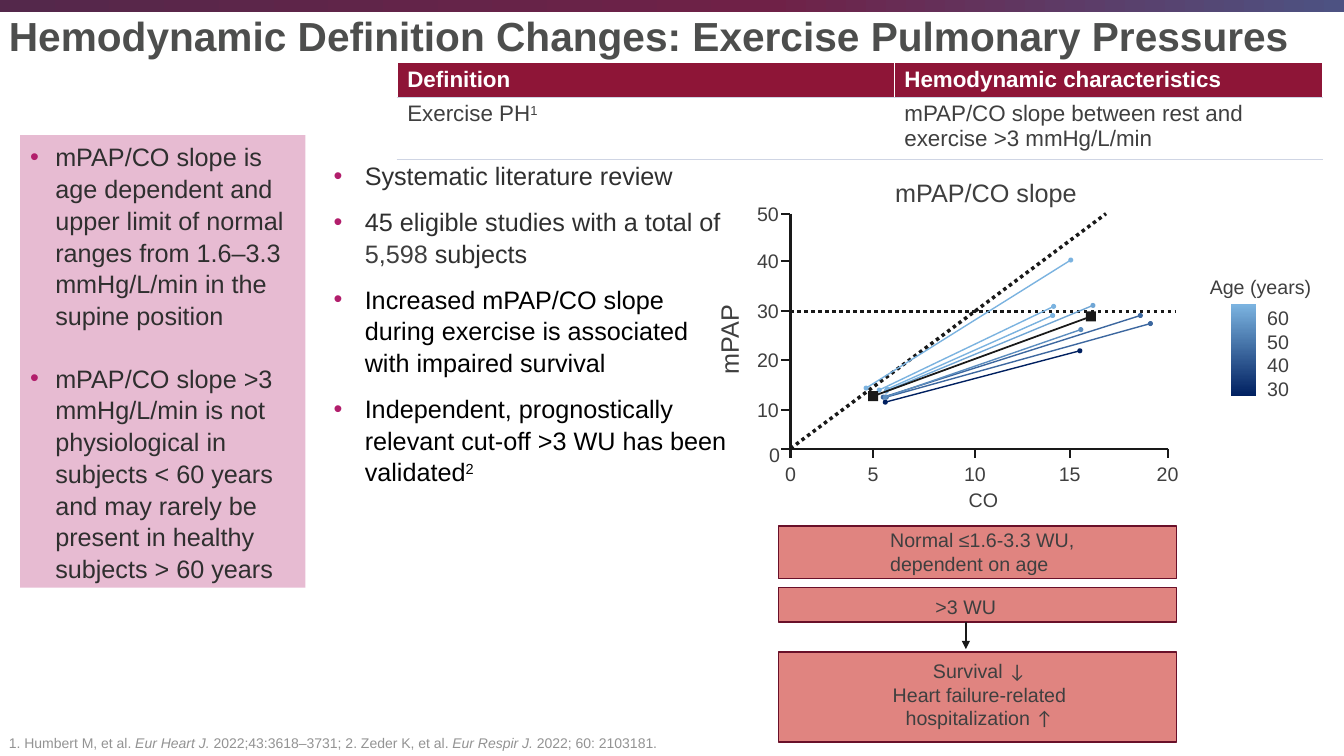
from lxml import etree
from pptx import Presentation
from pptx import util as u
from pptx.dml.color import RGBColor
from pptx.enum import dml, shapes, text
from pptx.oxml import parse_xml
from pptx.oxml.ns import nsdecls, qn

INK, GREY, DARK, MAGENTA = "191919", "3F3F3F", "2F2F2F", "B21E6C"
RECT, OVAL = shapes.MSO_SHAPE.RECTANGLE, shapes.MSO_SHAPE.OVAL
CENTER = text.PP_ALIGN.CENTER
BOTTOM, MIDDLE = text.MSO_ANCHOR.BOTTOM, text.MSO_ANCHOR.MIDDLE


def rgb(color):
    return RGBColor.from_string(color)


def inches(values):
    return [u.Inches(value) for value in values]


class Sheet:
    """Holds the style, the slide and the shapes being added to."""

    def __init__(self, slide, font="Arial", color=GREY, size=14):
        self.slide, self.shapes = slide, slide.shapes
        self.font, self.color, self.size = font, color, size

    def start_group(self):
        self.shapes = self.slide.shapes.add_group_shape().shapes

    def add_spans(self, para, spans, **style):
        """Each span is a string or a pair (string, style changes)."""
        for item in spans:
            words, changes = (item, {}) if isinstance(item, str) else item
            look = {**style, **changes}
            span = para.add_run()
            span.text = words
            span.font.name = look.get("font", self.font)
            span.font.size = u.Pt(look.get("size", self.size))
            span.font.color.rgb = rgb(look.get("color", self.color))
            span.font.bold = look.get("bold", False)
            span.font.italic = look.get("italic", False)
            if look.get("raised"):
                span.font._element.set("baseline", "30000")

    def text(self, at, paras, wrap=False, anchor=None, align=None, turn=0, **style):
        box = self.shapes.add_textbox(*inches(at))
        box.rotation = turn
        self.add_paras(box.text_frame, paras, wrap, anchor, align, **style)
        return box

    def add_paras(self, frame, paras, wrap, anchor=None, align=None, **style):
        frame.word_wrap = wrap
        if anchor is not None:
            frame.vertical_anchor = anchor
        for index, spans in enumerate(paras):
            para = frame.add_paragraph() if index else frame.paragraphs[0]
            if align is not None:
                para.alignment = align
            self.add_spans(para, spans, **style)

    def bullets(self, at, paras, indent, after=0, **style):
        box = self.text(at, paras, wrap=True, size=18, **style)
        for para in box.text_frame.paragraphs:
            para.space_before, para.space_after = u.Pt(10), u.Pt(after)
            para.line_spacing = 1.05
            props = para._p.get_or_add_pPr()
            props.set("marL", str(u.Inches(indent)))
            props.set("indent", str(-u.Inches(indent)))
            color = etree.SubElement(props, qn("a:buClr"))
            etree.SubElement(color, qn("a:srgbClr")).set("val", MAGENTA)
            etree.SubElement(props, qn("a:buFont")).set("typeface", "Arial")
            etree.SubElement(props, qn("a:buChar")).set("char", "•")
        return box

    def fill(self, shape, color, alpha=100):
        shape.fill.solid()
        shape.fill.fore_color.rgb = rgb(color)
        if alpha < 100:
            tint = shape._element.spPr.find(".//" + qn("a:srgbClr"))
            etree.SubElement(tint, qn("a:alpha")).set("val", str(alpha * 1000))

    def shape(self, kind, at, color, border=None):
        shape = self.shapes.add_shape(kind, *inches(at))
        shape.shadow.inherit = False
        self.fill(shape, color)
        if border:
            shape.line.color.rgb, shape.line.width = rgb(border), u.Pt(1)
        else:
            shape.line.fill.background()
        return shape

    def gradient(self, at, stops, angle):
        props = self.shape(RECT, at, stops[0][1])._element.spPr
        marks = "".join(f'<a:gs pos="{place * 1000}"><a:srgbClr val="{color}"/></a:gs>'
                        for place, color in stops)
        props.replace(props.find(qn("a:solidFill")), parse_xml(
            f'<a:gradFill {nsdecls("a")}><a:gsLst>{marks}</a:gsLst>'
            f'<a:lin ang="{angle * 60000}" scaled="0"/></a:gradFill>'))

    def marker(self, kind, center, size, color):
        x, y = center
        self.shape(kind, (x - size / 2, y - size / 2, size, size), color)

    def line(self, start, end, color=INK, width=1.5, dotted=False, arrow=False):
        line = self.shapes.add_connector(
            shapes.MSO_CONNECTOR.STRAIGHT, *inches((*start, *end)))
        line.line.color.rgb, line.line.width = rgb(color), u.Pt(width)
        if dotted:
            line.line.dash_style = dml.MSO_LINE.ROUND_DOT
        if arrow:
            outline = line._element.spPr.find(qn("a:ln"))
            etree.SubElement(outline, qn("a:tailEnd")).set("type", "triangle")
        etree.SubElement(line._element.spPr, qn("a:effectLst"))

    def table(self, at, widths, heights, rows):
        table = self.shapes.add_table(len(rows), len(widths), *inches(at)).table
        table.horz_banding = False
        for column, width in zip(table.columns, widths):
            column.width = u.Inches(width)
        for row, height, cells in zip(table.rows, heights, rows):
            row.height = u.Inches(height)
            header = cells is rows[0]
            for cell, spans in zip(row.cells, cells):
                cell.margin_top = cell.margin_bottom = u.Inches(0.04)
                self.add_paras(cell.text_frame, [spans], True, size=16, bold=header,
                               color="FFFFFF" if header else GREY)
                if header:
                    cell.vertical_anchor = MIDDLE
                    cell.fill.solid()
                    cell.fill.fore_color.rgb = rgb("8E1537")
                else:
                    cell.fill.background()
                for place, edge in enumerate(("lnT", "lnB")):
                    paint = ("<a:noFill/>" if header and edge == "lnT" else
                             '<a:solidFill><a:srgbClr val="CFD5E4"/></a:solidFill>')
                    cell._tc.get_or_add_tcPr().insert(place, parse_xml(
                        f'<a:{edge} {nsdecls("a")} w="9525">{paint}</a:{edge}>'))


deck = Presentation()
deck.slide_width, deck.slide_height = inches((13.33, 7.5))
page = Sheet(deck.slides.add_slide(deck.slide_layouts[6]))

# Top band and title
page.gradient((0, 0, 13.33, 0.12), [(0, "54284B"), (57, "6F2147"), (100, "4D5282")], 0)
page.text((-0.01, -0.07, 13.34, 0.71),
          [["Hemodynamic Definition Changes: Exercise Pulmonary Pressures"]],
          wrap=True, anchor=BOTTOM, size=29, color="4D4E4D", bold=True)

# Bullet lists
RAISED = {"raised": True}
panel = page.bullets((0.2, 1.34, 2.83, 4.49), [
    ["mPAP/CO slope is age dependent and upper limit of normal ranges "
     "from 1.6–3.3 mmHg/L/min in the supine position"],
    ["mPAP/CO slope >3 mmHg/L/min is not physiological in subjects < 60 years "
     "and may rarely be present in healthy subjects > 60 years"],
], 0.25, after=12, color=DARK)
page.fill(panel, MAGENTA, alpha=30)
BLACK = {"color": "000000"}
page.bullets((3.21, 1.53, 4.1, 4.21), [
    ["Systematic literature review"],
    ["45 eligible studies with a total of ", ("5,598 ", {"color": GREY}), "subjects"],
    [("Increased mPAP/CO slope during exercise is associated with impaired survival", BLACK)],
    [("Independent, prognostically relevant cut-off >3 WU has been validated", BLACK),
     ("2", {**BLACK, **RAISED})],
], 0.31, color=DARK)

# Definition table
page.table((3.94, 0.62, 9.18, 0.95), (4.93, 4.25), (0.35, 0.6), [
    [["Definition"], ["Hemodynamic characteristics"]],
    [["Exercise PH", ("1", RAISED)],
     ["mPAP/CO slope between rest and exercise >3 mmHg/L/min"]],
])

# References
ITALIC = {"italic": True}
page.text((-0.01, 7.02, 9.86, 0.48), [[
    "1. Humbert M, et al. ", ("Eur Heart J. ", ITALIC),
    "2022;43:3618–3731; 2. Zeder K, et al. ", ("Eur Respir J. ", ITALIC),
    "2022; 60: 2103181."]], wrap=True, anchor=BOTTOM, size=10, color="939393")

# Slope diagram: axes, ticks and labels
page.start_group()
LEFT, BASE, TICK = 7.84, 4.45, 0.09
page.line((LEFT, 2.12), (LEFT, BASE + TICK))
page.line((LEFT - TICK, BASE), (11.58, BASE))
for pressure, y in zip((50, 40, 30, 20, 10), (2.12, 2.59, 3.09, 3.57, 4.07)):
    page.line((LEFT - TICK, y), (LEFT, y))
    page.text((7.41, y - 0.17, 0.42, 0.34), [[str(pressure)]])
page.text((7.53, 4.34, 0.31, 0.34), [["0"]])
for output, x in zip((0, 5, 10, 15, 20), (LEFT, 8.66, 9.67, 10.61, 11.58)):
    if output:
        page.line((x, BASE), (x, BASE + TICK))
    width = 0.42 if output >= 10 else 0.31
    page.text((x - width / 2, 4.53, width, 0.34), [[str(output)]], align=CENTER)
page.text((9.51, 4.79, 0.5, 0.34), [["CO"]])
page.text((8.78, 1.71, 2.02, 0.4), [["mPAP/CO slope"]], size=18)
page.text((6.78, 3.16, 0.9, 0.4), [["mPAP"]], turn=270, size=18)

# Slope diagram: limits, age lines and the mean
page.line((LEFT, BASE), (10.97, 2.12), width=2.5, dotted=True)
page.line((LEFT, 3.09), (11.66, 3.09), width=2.5, dotted=True)
AGE_LINES = [
    ((8.59, 3.85), (10.62, 2.58), "7BB3E0"), ((8.72, 3.87), (10.45, 3.04), "7BB3E0"),
    ((8.79, 3.88), (10.84, 3.03), "70A6D5"), ((8.8, 3.86), (10.44, 3.13), "7BB3E0"),
    ((8.76, 3.94), (11.31, 3.13), "3C679F"), ((8.79, 3.94), (11.41, 3.21), "3C679F"),
    ((8.78, 3.99), (10.71, 3.48), "002060"), ((8.78, 3.94), (10.72, 3.27), "5B8DBF"),
]
for rest, exercise, shade in AGE_LINES:
    page.line(rest, exercise, shade, 1)
    for end in (rest, exercise):
        page.marker(OVAL, end, 0.05, shade)
MEAN = (8.66, 3.93), (10.82, 3.14)
page.line(*MEAN, width=1.25)
for end in MEAN:
    page.marker(RECT, end, 0.1, INK)

# Age legend
page.gradient((12.21, 3.02, 0.25, 0.91), [(0, "002060"), (100, "7BB3E0")], 270)
page.text((11.9, 2.68, 1.21, 0.34), [["Age (years)"]])
page.text((12.47, 2.99, 0.42, 1.04), [[str(age)] for age in (60, 50, 40, 30)])

# Outcome boxes
page.start_group()
for top, height in ((5.22, 0.52), (5.83, 0.34), (6.47, 0.89)):
    page.shape(RECT, (7.72, top, 3.95, height), "E08480", "691029")
page.text((8.73, 5.19, 2.09, 0.57), [["Normal ≤1.6-3.3 WU,"], ["dependent on age"]])
page.text((9.18, 5.85, 0.81, 0.34), [[">3 WU"]])
ARROW = {"font": "Calibri"}
page.text((8.04, 6.49, 3.35, 0.81), [
    ["Survival ", ("↓", ARROW)], ["Heart failure-related"],
    ["hospitalization ", ("↑", ARROW)]], wrap=True, align=CENTER)
page.line((9.58, 6.17), (9.58, 6.44), arrow=True)

deck.save("out.pptx")
